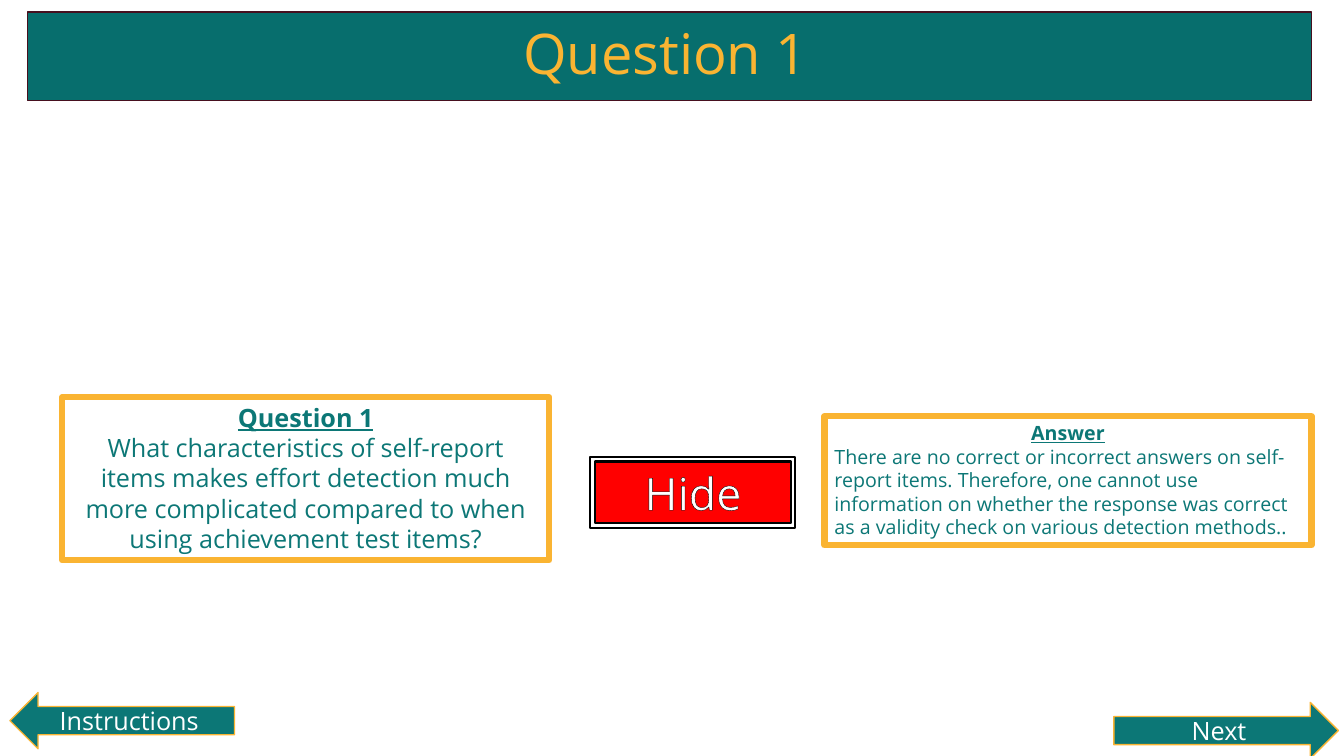
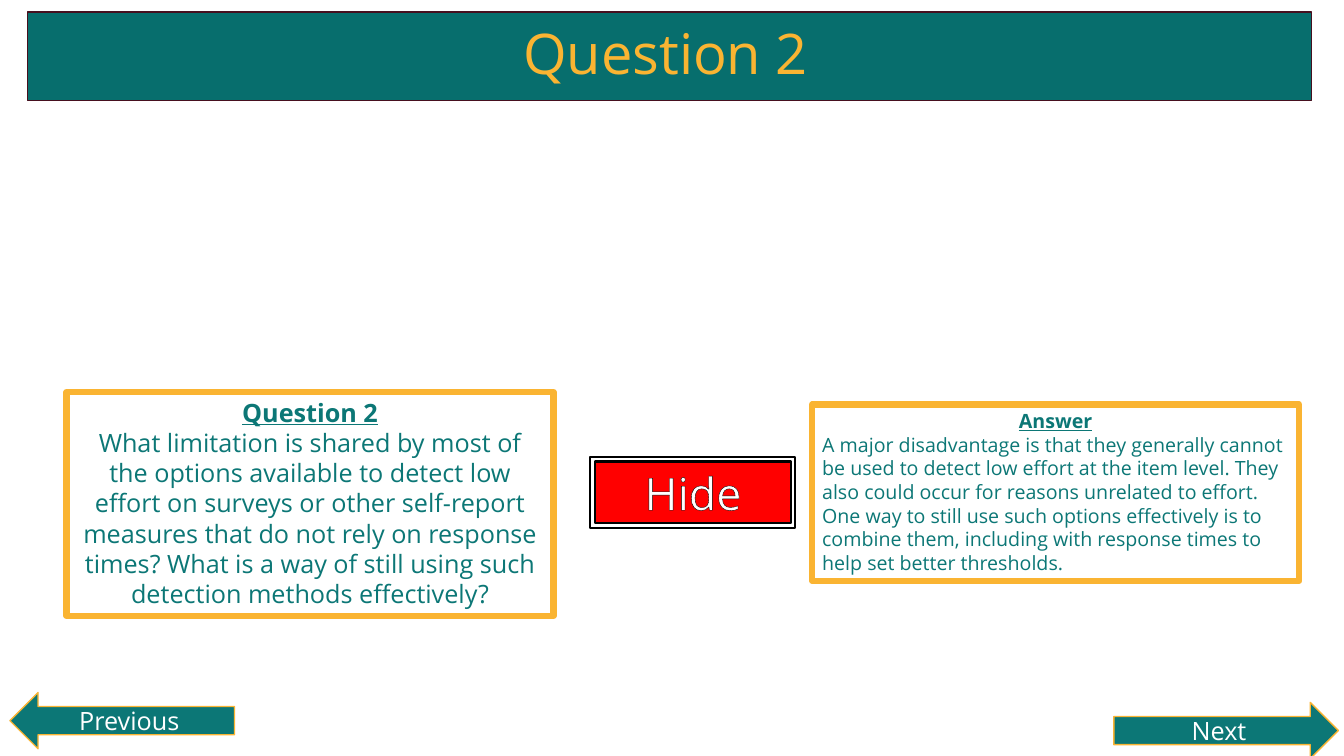
from dataclasses import dataclass

from lxml.etree import SubElement
from pptx import Presentation
from pptx.dml.color import RGBColor
from pptx.enum.shapes import MSO_SHAPE as Preset
from pptx.enum.text import MSO_ANCHOR as Anchor, MSO_AUTO_SIZE as AutoSize, PP_ALIGN as Align
from pptx.oxml.ns import qn
from pptx.util import Cm, Pt

# Shared look
FONT = "Open Sans"
WHITE = RGBColor(0xFF, 0xFF, 0xFF)
BLACK = RGBColor(0x00, 0x00, 0x00)
RED = RGBColor(0xFF, 0x00, 0x00)
GOLD = RGBColor(0xFA, 0xB4, 0x32)
TEAL = RGBColor(0x0C, 0x77, 0x76)
BAND_TEAL = RGBColor(0x07, 0x6E, 0x6D)
MAROON = RGBColor(0x46, 0x10, 0x1F)

HEADING = {"bold": True, "underline": True}
CARD_WIDTH = 12.27


@dataclass(frozen=True)
class Area:
    """A rectangle in centimetres."""
    left: float
    top: float
    width: float
    height: float

    def lengths(self) -> tuple:
        return Cm(self.left), Cm(self.top), Cm(self.width), Cm(self.height)


@dataclass(frozen=True)
class Card:
    heading: str
    body: str
    area: Area
    size: int
    body_align: Align


@dataclass(frozen=True)
class Quiz:
    title: str
    back: str
    cards: tuple


BAND = Area(0.69, 0.3, 32.36, 2.24)
TITLE = Area(0.81, 0.56, 31.93, 1.7)
BACK = Area(0.25, 17.45, 5.66, 1.42)
NEXT = Area(28.07, 17.7, 5.66, 1.42)
BUTTON_FRAME = Area(14.87, 11.52, 5.16, 1.78)
BUTTON = Area(15, 11.63, 4.93, 1.55)


def question(heading: str, body: str, left: float, top: float, height: float) -> Card:
    return Card(heading, body, Area(left, top, CARD_WIDTH, height), 18, Align.CENTER)


def answer(body: str, left: float, top: float, height: float) -> Card:
    return Card("Answer", body, Area(left, top, CARD_WIDTH, height), 14, Align.LEFT)


QUIZZES = (
    Quiz("Question 1", "Instructions", (
        question(
            "Question 1",
            "What characteristics of self-report items makes effort detection much "
            "more complicated compared to when using achievement test items?",
            1.57, 10.01, 4.11),
        answer(
            "There are no correct or incorrect answers on self-report items. "
            "Therefore, one cannot use information on whether the response was "
            "correct as a validity check on various detection methods..",
            20.78, 10.49, 3.25),
    )),
    Quiz("Question 2", "Previous", (
        question(
            "Question 2",
            "What limitation is shared by most of the options available to detect "
            "low effort on surveys or other self-report measures that do not rely on "
            "response times? What is a way of still using such detection methods "
            "effectively?",
            1.68, 9.88, 5.64),
        answer(
            "A major disadvantage is that they generally cannot be used to detect "
            "low effort at the item level. They also could occur for reasons "
            "unrelated to effort. One way to still use such options effectively is "
            "to combine them, including with response times to help set better "
            "thresholds.",
            20.47, 10.19, 4.45),
    )),
)


def write(para, text: str, size: int, color: RGBColor, align=Align.CENTER, **extra):
    """Put one formatted span into a paragraph and return it."""
    para.alignment = align
    span = para.add_run()
    span.text = text
    for name, value in {"name": FONT, "size": Pt(size), **extra}.items():
        setattr(span.font, name, value)
    span.font.color.rgb = color
    return span


def add_block(page, preset: Preset, area: Area, fill: RGBColor, line: RGBColor, weight: float):
    """Draw a filled preset shape without a shadow."""
    block = page.shapes.add_shape(preset, *area.lengths())
    block.shadow.inherit = False
    block.fill.solid()
    block.fill.fore_color.rgb = fill
    block.line.color.rgb = line
    block.line.width = Pt(weight)
    block.text_frame.vertical_anchor = Anchor.MIDDLE
    return block


def add_title(page, text: str) -> None:
    add_block(page, Preset.RECTANGLE, BAND, BAND_TEAL, MAROON, 1)
    box = page.shapes.add_textbox(*TITLE.lengths())
    box.text_frame.word_wrap = True
    box.text_frame.vertical_anchor = Anchor.MIDDLE
    para = box.text_frame.paragraphs[0]
    para.line_spacing = 0.9
    write(para, text, 40, GOLD)


def add_arrow(page, preset: Preset, area: Area, text: str) -> None:
    arrow = add_block(page, preset, area, TEAL, GOLD, 1)
    write(arrow.text_frame.paragraphs[0], text, 18, WHITE)


def add_card(page, card: Card) -> None:
    box = page.shapes.add_textbox(*card.area.lengths())
    box.line.color.rgb = GOLD
    box.line.width = Pt(4.5)
    frame = box.text_frame
    frame.word_wrap = True
    frame.auto_size = AutoSize.SHAPE_TO_FIT_TEXT
    write(frame.paragraphs[0], card.heading, card.size, TEAL, **HEADING)
    write(frame.add_paragraph(), card.body, card.size, TEAL, card.body_align)


def outline_text(span, color: RGBColor, weight: float) -> None:
    props = span.font._element if hasattr(span.font, "_element") else span._r.get_or_add_rPr()
    line = SubElement(props, qn("a:ln"), w=str(Pt(weight)))
    fill = SubElement(line, qn("a:solidFill"))
    SubElement(fill, qn("a:srgbClr"), val=str(color))
    props.insert(0, line)


def add_hide_button(page) -> None:
    add_block(page, Preset.RECTANGLE, BUTTON_FRAME, WHITE, BLACK, 1.5)
    button = add_block(page, Preset.RECTANGLE, BUTTON, RED, BLACK, 1.5)
    span = write(button.text_frame.paragraphs[0], "Hide", 32, WHITE)
    outline_text(span, BLACK, 0.75)


def add_quiz(deck, quiz: Quiz) -> None:
    page = deck.slides.add_slide(deck.slide_layouts[6])
    add_title(page, quiz.title)
    # Navigation
    add_arrow(page, Preset.LEFT_ARROW, BACK, quiz.back)
    add_arrow(page, Preset.RIGHT_ARROW, NEXT, "Next")
    # Question, answer and the button between them
    for card in quiz.cards:
        add_card(page, card)
    add_hide_button(page)


def main() -> None:
    deck = Presentation()
    deck.slide_width, deck.slide_height = Cm(33.87), Cm(19.05)
    for quiz in QUIZZES:
        add_quiz(deck, quiz)
    deck.save("out.pptx")


if __name__ == "__main__":
    main()
